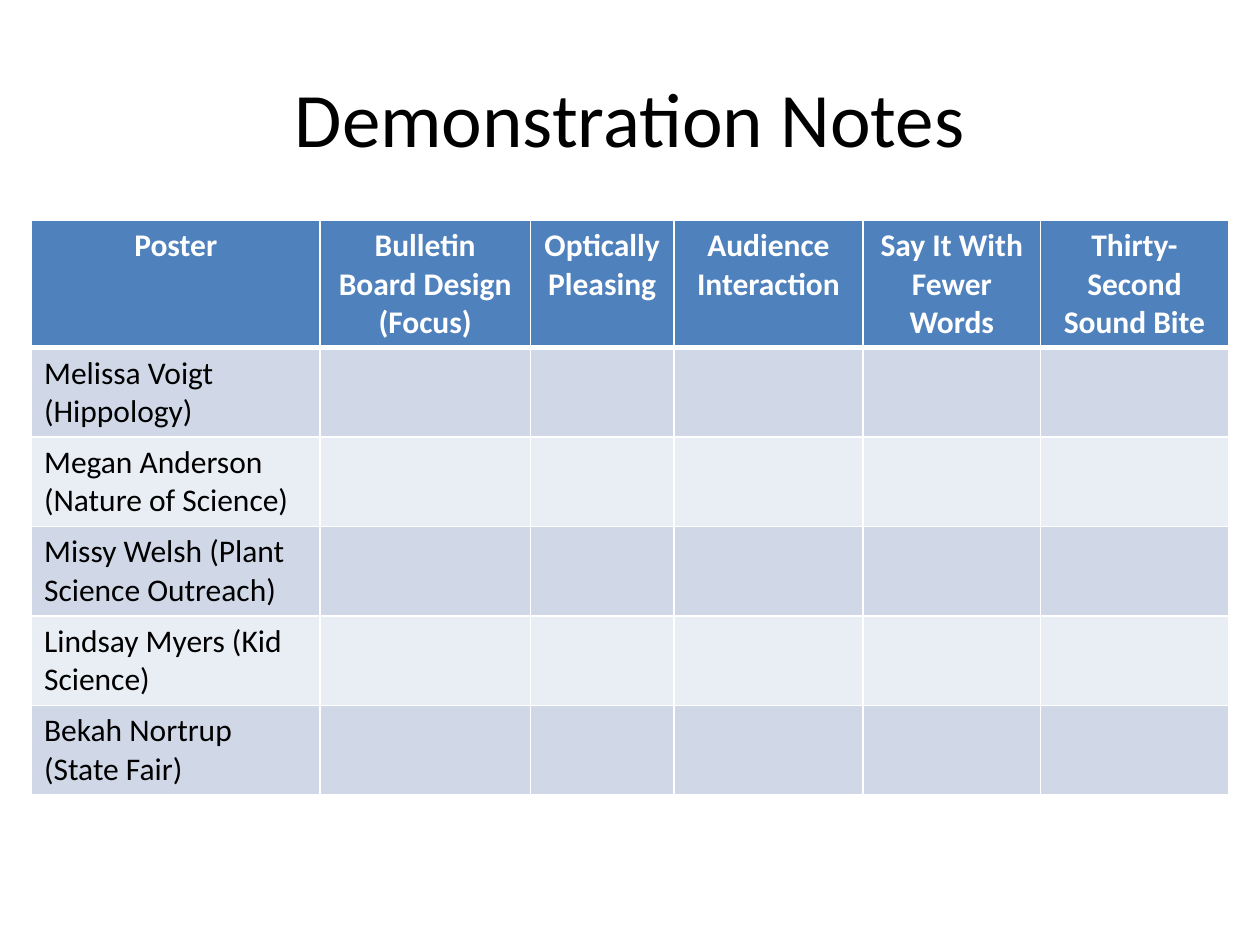
from lxml.etree import SubElement
from pptx import Presentation
from pptx.dml.color import RGBColor
from pptx.enum.text import MSO_ANCHOR as Anchor, PP_ALIGN as Align
from pptx.oxml.ns import qn
from pptx.util import Inches, Pt

WHITE = RGBColor(0xFF, 0xFF, 0xFF)
BLACK = RGBColor(0x00, 0x00, 0x00)
HEADER_BLUE = RGBColor(0x4F, 0x81, 0xBD)
BANDS = [RGBColor(0xE9, 0xED, 0xF4), RGBColor(0xD0, 0xD8, 0xE8)]

TITLE_FORMAT = {"name": "Calibri", "size": Pt(44), "bold": False}
HEADER_FORMAT = {"name": "Calibri", "size": Pt(18), "bold": True}
BODY_FORMAT = {"name": "Calibri", "size": Pt(18), "bold": False}

COLUMN_WIDTHS = [2.29, 1.67, 1.14, 1.5, 1.41, 1.49]
HEADERS = ["Poster", "Bulletin Board Design (Focus)", "Optically Pleasing",
           "Audience Interaction", "Say It With Fewer Words",
           "Thirty-Second Sound Bite"]
POSTERS = ["Melissa Voigt (Hippology)",
           "Megan Anderson\n(Nature of Science)",
           "Missy Welsh (Plant Science Outreach)",
           "Lindsay Myers (Kid Science)",
           "Bekah Nortrup (State Fair)"]
ROW_HEIGHTS = [1.01] + [0.71] * len(POSTERS)


def write_text(text_frame, text, font_format, color, alignment):
    text_frame.text = text
    for paragraph in text_frame.paragraphs:
        paragraph.alignment = alignment
        for run in paragraph.runs:
            for attribute, value in font_format.items():
                setattr(run.font, attribute, value)
            run.font.color.rgb = color


def add_borders(cell, widths):
    """Draw white cell edges; widths maps an edge letter (L, R, T, B) to points."""
    properties = cell._tc.get_or_add_tcPr()
    for edge, width in widths.items():
        line = SubElement(properties, qn(f"a:ln{edge}"), w=str(Pt(width)))
        fill = SubElement(line, qn("a:solidFill"))
        SubElement(fill, qn("a:srgbClr"), val=str(WHITE))


presentation = Presentation()
presentation.slide_width = Inches(10)
presentation.slide_height = Inches(7.5)
slide = presentation.slides.add_slide(presentation.slide_layouts[6])

title = slide.shapes.add_textbox(Inches(0.5), Inches(0.3), Inches(9), Inches(1.25))
title.text_frame.word_wrap = True
title.text_frame.vertical_anchor = Anchor.MIDDLE
write_text(title.text_frame, "Demonstration Notes", TITLE_FORMAT, BLACK, Align.CENTER)

table = slide.shapes.add_table(
    len(ROW_HEIGHTS), len(COLUMN_WIDTHS),
    Inches(0.25), Inches(1.75), Inches(9.5), Inches(sum(ROW_HEIGHTS))).table
for column, width in zip(table.columns, COLUMN_WIDTHS):
    column.width = Inches(width)
for row, height in zip(table.rows, ROW_HEIGHTS):
    row.height = Inches(height)

for row_index, row in enumerate(table.rows):
    for column_index, cell in enumerate(row.cells):
        is_header = row_index == 0
        add_borders(cell, {"L": 1, "R": 1, "T": 3 if row_index == 1 else 1,
                           "B": 3 if is_header else 1})
        cell.fill.solid()
        cell.fill.fore_color.rgb = HEADER_BLUE if is_header else BANDS[row_index % 2]
        if is_header:
            write_text(cell.text_frame, HEADERS[column_index],
                       HEADER_FORMAT, WHITE, Align.CENTER)
        elif column_index == 0:
            write_text(cell.text_frame, POSTERS[row_index - 1],
                       BODY_FORMAT, BLACK, Align.LEFT)

presentation.save("out.pptx")
